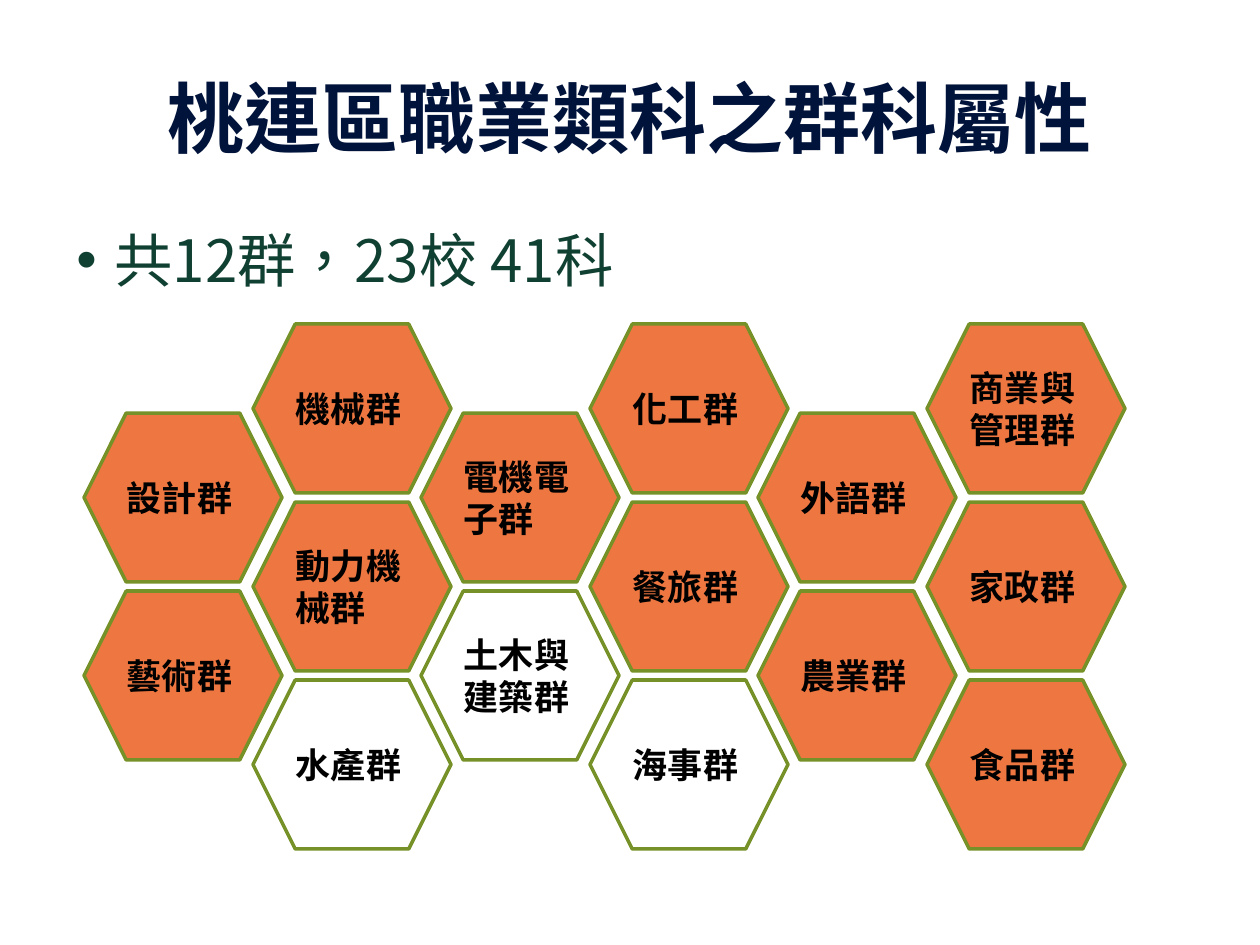
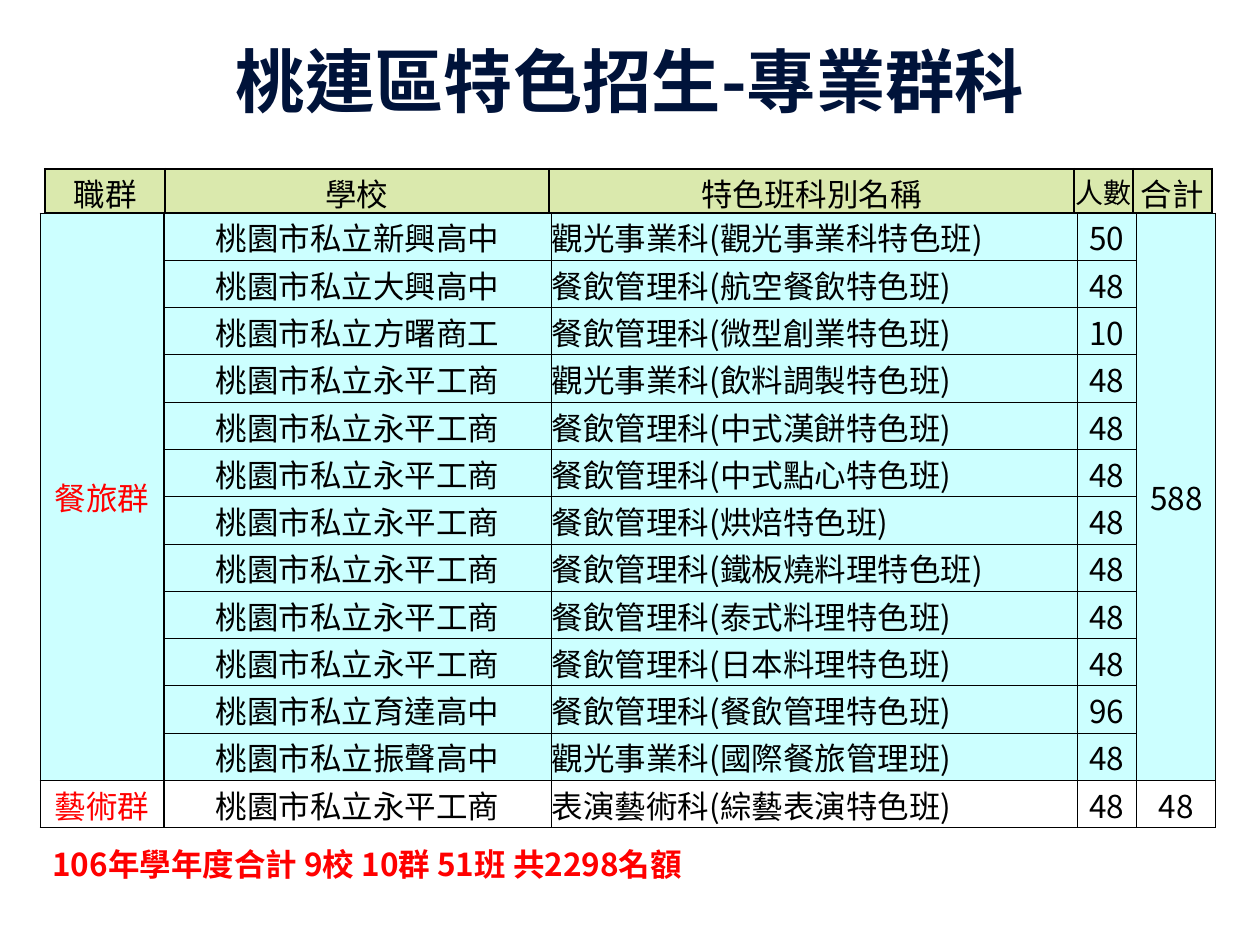
from dataclasses import dataclass

from lxml import etree
from pptx import Presentation
from pptx.dml.color import RGBColor
from pptx.enum.shapes import MSO_SHAPE
from pptx.enum.text import MSO_ANCHOR, PP_ALIGN
from pptx.oxml.ns import qn
from pptx.util import Pt

HEXAGON = MSO_SHAPE.HEXAGON
TOP, MIDDLE = MSO_ANCHOR.TOP, MSO_ANCHOR.MIDDLE
LEFT, CENTER = PP_ALIGN.LEFT, PP_ALIGN.CENTER
EMU_PER_PX = 914400 / 126


@dataclass(frozen=True)
class Theme:
    title: str = "00133A"
    title_outline: str = "FFFFFF"
    body: str = "104031"
    ink: str = "000000"
    accent: str = "FF0000"
    hexagon_fill: str = "EE7640"
    hexagon_line: str = "769127"
    header_fill: str = "DAE9AD"
    group_fill: str = "CCFFFF"
    sans: str = "DejaVu Sans"
    cjk: str = "Noto Sans CJK SC"
    title_size: float = 44
    small_title_size: float = 39.6
    body_size: float = 33.3
    hexagon_size: float = 20
    text_size: float = 18
    narrow_size: float = 16


THEME = Theme()

TITLE_BOX = (63, 38, 1134, 158)
HEXAGON_WIDTH, HEXAGON_HEIGHT = 198, 169
FIRST_COLUMN_LEFT, LAST_COLUMN_LEFT = 84, 927
HEXAGON_TOP, HALF_ROW = 324, 89

HEXAGON_COLUMNS = [
    (1, ["設計群", "藝術群"]),
    (0, ["機械群", "動力機械群", "水產群"]),
    (1, ["電機電子群", "土木與建築群"]),
    (0, ["化工群", "餐旅群", "海事群"]),
    (1, ["外語群", "農業群"]),
    (0, ["商業與管理群", "家政群", "食品群"]),
]
UNFILLED_GROUPS = {"水產群", "土木與建築群", "海事群"}

HEADERS = ["職群", "學校", "特色班科別名稱", "人數", "合計"]
HEADER_WIDTHS = [120, 384, 525, 59, 79]
CLASS_WIDTHS = [124, 387, 526, 60, 79]
SCHOOL_PREFIX = "桃園市私立"
CLASSES = [
    ("餐旅群", "新興高中", "觀光事業科(觀光事業科特色班)", "50", "588"),
    ("", "大興高中", "餐飲管理科(航空餐飲特色班)", "48", ""),
    ("", "方曙商工", "餐飲管理科(微型創業特色班)", "10", ""),
    ("", "永平工商", "觀光事業科(飲料調製特色班)", "48", ""),
    ("", "永平工商", "餐飲管理科(中式漢餅特色班)", "48", ""),
    ("", "永平工商", "餐飲管理科(中式點心特色班)", "48", ""),
    ("", "永平工商", "餐飲管理科(烘焙特色班)", "48", ""),
    ("", "永平工商", "餐飲管理科(鐵板燒料理特色班)", "48", ""),
    ("", "永平工商", "餐飲管理科(泰式料理特色班)", "48", ""),
    ("", "永平工商", "餐飲管理科(日本料理特色班)", "48", ""),
    ("", "育達高中", "餐飲管理科(餐飲管理特色班)", "96", ""),
    ("", "振聲高中", "觀光事業科(國際餐旅管理班)", "48", ""),
    ("藝術群", "永平工商", "表演藝術科(綜藝表演特色班)", "48", "48"),
]


def px(length):
    return round(length * EMU_PER_PX)


def add_line_fill(line, color):
    fill = etree.SubElement(line, qn("a:solidFill"))
    etree.SubElement(fill, qn("a:srgbClr"), val=color)


def add_run(paragraph, text, size, color, font_name, bold=False):
    run = paragraph.add_run()
    run.text = text
    run.font.size = Pt(size)
    run.font.bold = bold
    run.font.color.rgb = RGBColor.from_string(color)
    run.font.name = font_name
    properties = run.font._element
    properties.set("lang", "zh-TW")
    latin = properties.find(qn("a:latin"))
    east_asian = etree.Element(qn("a:ea"), typeface=font_name)
    latin.addnext(east_asian)
    return run


def add_text(slide, box, text, size, color, font_name, bold=False,
             align=LEFT, anchor=TOP, margin_top=6):
    shape = slide.shapes.add_textbox(*map(px, box))
    frame = shape.text_frame
    frame.word_wrap = True
    frame.vertical_anchor = anchor
    frame.margin_top = px(margin_top)
    paragraph = frame.paragraphs[0]
    paragraph.alignment = align
    run = add_run(paragraph, text, size, color, font_name, bold)
    return paragraph, run


def add_title(slide, text, size, font_name, anchor, margin_top):
    _, run = add_text(slide, TITLE_BOX, text, size, THEME.title, font_name, True,
                      CENTER, anchor, margin_top)
    outline = etree.Element(qn("a:ln"), w=str(Pt(1.5)))
    add_line_fill(outline, THEME.title_outline)
    run.font._element.insert(0, outline)


def add_bullet_text(slide, box, text):
    paragraph, _ = add_text(slide, box, text, THEME.body_size, THEME.body,
                            THEME.cjk, margin_top=0)
    properties = paragraph._p.get_or_add_pPr()
    properties.set("marL", str(px(38)))
    properties.set("indent", str(-px(38)))
    etree.SubElement(properties, qn("a:buFont"), typeface="Arial")
    etree.SubElement(properties, qn("a:buChar"), char="•")


def add_hexagon(slide, left, top, text):
    shape = slide.shapes.add_shape(
        HEXAGON, px(left), px(top), px(HEXAGON_WIDTH), px(HEXAGON_HEIGHT))
    shape.shadow.inherit = False
    if text in UNFILLED_GROUPS:
        shape.fill.background()
    else:
        shape.fill.solid()
        shape.fill.fore_color.rgb = RGBColor.from_string(THEME.hexagon_fill)
    shape.line.color.rgb = RGBColor.from_string(THEME.hexagon_line)
    shape.line.width = Pt(2)
    frame = shape.text_frame
    frame.word_wrap = True
    frame.vertical_anchor = MIDDLE
    paragraph = frame.paragraphs[0]
    paragraph.alignment = LEFT
    add_run(paragraph, text, THEME.hexagon_size, THEME.ink, THEME.sans, True)


def add_honeycomb(slide):
    pitch = (LAST_COLUMN_LEFT - FIRST_COLUMN_LEFT) / (len(HEXAGON_COLUMNS) - 1)
    for column, (offset, names) in enumerate(HEXAGON_COLUMNS):
        left = round(FIRST_COLUMN_LEFT + column * pitch)
        for row, name in enumerate(names):
            top = HEXAGON_TOP + (offset + 2 * row) * HALF_ROW
            add_hexagon(slide, left, top, name)


def add_table(slide, left, top, widths, height, row_count):
    shape = slide.shapes.add_table(
        row_count, len(widths), px(left), px(top), px(sum(widths)), px(height))
    table = shape.table
    table.first_row = False
    table.horz_banding = False
    for column, width in zip(table.columns, widths):
        column.width = px(width)
    for row in table.rows:
        row.height = px(height) // row_count
    return table


def style_cell(cell, fill, left=0.5, right=0.5, top=0.5, bottom=0.5):
    cell.margin_left = cell.margin_right = cell.margin_top = px(1)
    cell.margin_bottom = 0
    cell.vertical_anchor = MIDDLE
    properties = cell._tc.get_or_add_tcPr()
    sides = {"lnL": left, "lnR": right, "lnT": top, "lnB": bottom}
    for tag, width in sides.items():
        border = etree.SubElement(properties, qn(f"a:{tag}"), w=str(Pt(width)))
        add_line_fill(border, THEME.ink)
    if fill:
        cell.fill.solid()
        cell.fill.fore_color.rgb = RGBColor.from_string(fill)
    else:
        cell.fill.background()


def write_cell(cell, text, align=CENTER, size=THEME.text_size, color=THEME.ink):
    paragraph = cell.text_frame.paragraphs[0]
    paragraph.alignment = align
    add_run(paragraph, text, size, color, THEME.cjk)


def add_class_table(slide):
    last_row = len(CLASSES) - 1
    table = add_table(slide, 40, 213, CLASS_WIDTHS, 615, len(CLASSES))
    for row, (group, school, *rest) in enumerate(CLASSES):
        texts = [group, SCHOOL_PREFIX + school, *rest]
        for column, text in enumerate(texts):
            cell = table.cell(row, column)
            style_cell(cell, THEME.group_fill if row < last_row else None,
                       left=1 if column == 1 else 0.5,
                       right=1 if column == 0 else 0.5,
                       bottom=1 if row == last_row else 0.5)
            if text:
                write_cell(cell, text, LEFT if column == 2 else CENTER,
                           color=THEME.accent if column == 0 else THEME.ink)
    for column in (0, len(CLASS_WIDTHS) - 1):
        table.cell(0, column).merge(table.cell(last_row - 1, column))


def add_header_table(slide):
    table = add_table(slide, 45, 169, HEADER_WIDTHS, 44, 1)
    for column, text in enumerate(HEADERS):
        cell = table.cell(0, column)
        style_cell(cell, THEME.header_fill, 1.5, 1.5, 1.5, 1.5)
        size = THEME.narrow_size if text == "人數" else THEME.text_size
        write_cell(cell, text, size=size)


def build_groups_slide(slide):
    add_bullet_text(slide, (64, 224, 1121, 79), "共12群，23校 41科")
    add_title(slide, "桃連區職業類科之群科屬性", THEME.title_size, THEME.sans, MIDDLE, 6)
    add_honeycomb(slide)


def build_classes_slide(slide):
    add_text(slide, (40, 839, 1155, 81), "106年學年度合計 9校 10群 51班 共2298名額",
             THEME.text_size, THEME.accent, THEME.cjk, True)
    add_class_table(slide)
    add_header_table(slide)
    add_title(slide, "桃連區特色招生-專業群科", THEME.small_title_size, THEME.cjk, TOP, 0)


def main():
    presentation = Presentation()
    presentation.slide_width = px(1260)
    presentation.slide_height = px(945)
    blank = presentation.slide_layouts[6]
    for build in (build_groups_slide, build_classes_slide):
        build(presentation.slides.add_slide(blank))
    presentation.save("out.pptx")


if __name__ == "__main__":
    main()
